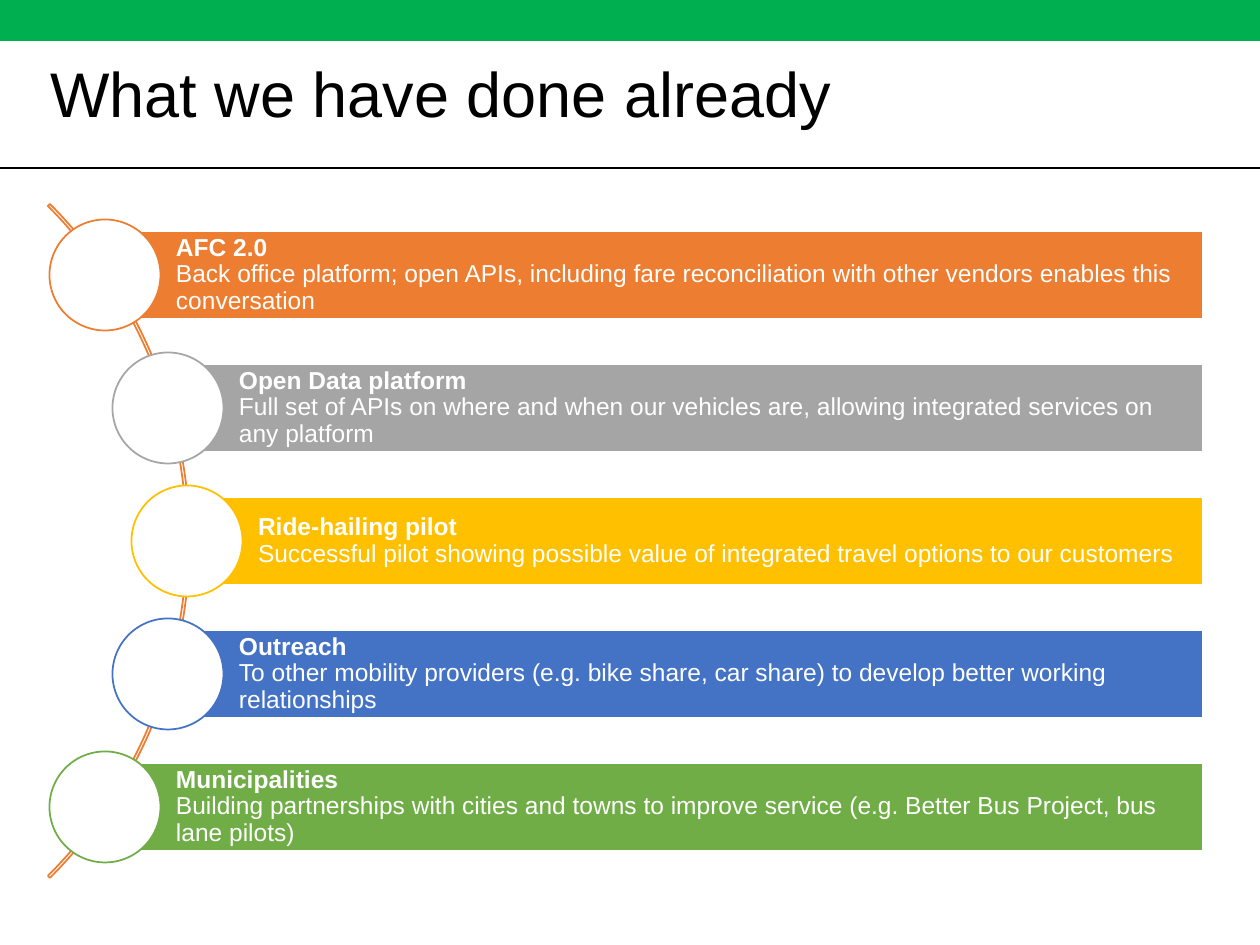
from math import sqrt

from lxml import etree
from pptx import Presentation
from pptx.dml.color import RGBColor
from pptx.enum.shapes import MSO_CONNECTOR, MSO_SHAPE
from pptx.enum.text import MSO_ANCHOR, PP_ALIGN
from pptx.oxml.ns import qn
from pptx.util import Emu, Pt

RECT, OVAL, ARC = MSO_SHAPE.RECTANGLE, MSO_SHAPE.OVAL, MSO_SHAPE.BLOCK_ARC
LINE = MSO_CONNECTOR.STRAIGHT
MID, LEFT = MSO_ANCHOR.MIDDLE, PP_ALIGN.LEFT

HUES = {
    "white": "FFFFFF", "black": "000000", "band": "00B050",
    "orange": "ED7D31", "gray": "A5A5A5", "gold": "FFC000",
    "blue": "4472C4", "green": "70AD47",
}
ROWS = [
    ("orange", "AFC 2.0",
     "Back office platform; open APIs, including fare reconciliation "
     "with other vendors enables this conversation"),
    ("gray", "Open Data platform",
     "Full set of APIs on where and when our vehicles are, "
     "allowing integrated services on any platform"),
    ("gold", "Ride-hailing pilot",
     "Successful pilot showing possible value of integrated travel "
     "options to our customers"),
    ("blue", "Outreach",
     "To other mobility providers (e.g. bike share, car share) "
     "to develop better working relationships"),
    ("green", "Municipalities",
     "Building partnerships with cities and towns to improve service "
     "(e.g. Better Bus Project, bus lane pilots)"),
]


def px(n):
    return Emu(round(n * 914400 / 126))


def hue(name):
    return RGBColor.from_string(HUES[name])


class Deck:
    font = "Arial"

    def __init__(self, wide, high):
        self.prs = Presentation()
        self.prs.slide_width, self.prs.slide_height = px(wide), px(high)
        self.slide = self.prs.slides.add_slide(self.prs.slide_layouts[6])

    def shape(self, kind, x, y, w, h, fill=None, edge=None):
        item = self.slide.shapes.add_shape(kind, px(x), px(y), px(w), px(h))
        item.shadow.inherit = False
        if fill:
            item.fill.solid()
            item.fill.fore_color.rgb = hue(fill)
        else:
            item.fill.background()
        if edge:
            item.line.color.rgb = hue(edge)
            item.line.width = Pt(1)
        else:
            item.line.fill.background()
        return item

    def rule(self, x1, y1, x2, y2, color, width):
        item = self.slide.shapes.add_connector(LINE, px(x1), px(y1), px(x2), px(y2))
        item.line.color.rgb = hue(color)
        item.line.width = Pt(width)
        etree.SubElement(item._element.spPr, qn("a:effectLst"))

    def style(self, frame, size, color):
        frame.word_wrap = True
        frame.vertical_anchor = MID
        para = frame.paragraphs[0]
        para.alignment = LEFT
        para.line_spacing = 0.9
        para.font.name = self.font
        para.font.size = Pt(size)
        para.font.color.rgb = hue(color)
        return para

    def title(self, text, x, y, w, h):
        box = self.slide.shapes.add_textbox(px(x), px(y), px(w), px(h))
        self.style(box.text_frame, 36, "black").add_run().text = text

    def bar(self, x, y, w, h, color, head, body):
        frame = self.shape(RECT, x, y, w, h, color, "white").text_frame
        frame.margin_left = px(71)
        frame.margin_top = frame.margin_right = frame.margin_bottom = px(5)
        para = self.style(frame, 14, "white")
        run = para.add_run()
        run.text = head
        run.font.bold = True
        para.add_line_break()
        para.add_run().text = body

    def arc(self, x, y, size, color):
        item = self.shape(ARC, x, y, size, size, edge=color)
        for i, value in enumerate((189, 27, 0.003)):
            item.adjustments[i] = value


def main():
    deck = Deck(1260, 945)
    deck.shape(RECT, 0, 0, 1260, 41, "band")
    deck.rule(0, 168, 1260, 168, "black", 1.5)
    deck.title("What we have done already", 38, 50, 1176, 95)

    hub_x, hub_y, reach = -287, 541, 474
    size, pitch, tall, dot, right = 953, 133, 88, 111, 1203
    deck.arc(hub_x - size / 2, hub_y - size / 2, size, "orange")
    for i, (color, head, body) in enumerate(ROWS):
        drop = (i - len(ROWS) // 2) * pitch
        x = round(hub_x + sqrt(reach ** 2 - drop ** 2))
        y = hub_y + drop
        deck.bar(x, y - tall / 2, right - x, tall, color, head, body)
        deck.shape(OVAL, x - dot / 2, y - dot / 2, dot, dot, "white", color)
    deck.prs.save("out.pptx")


if __name__ == "__main__":
    main()
